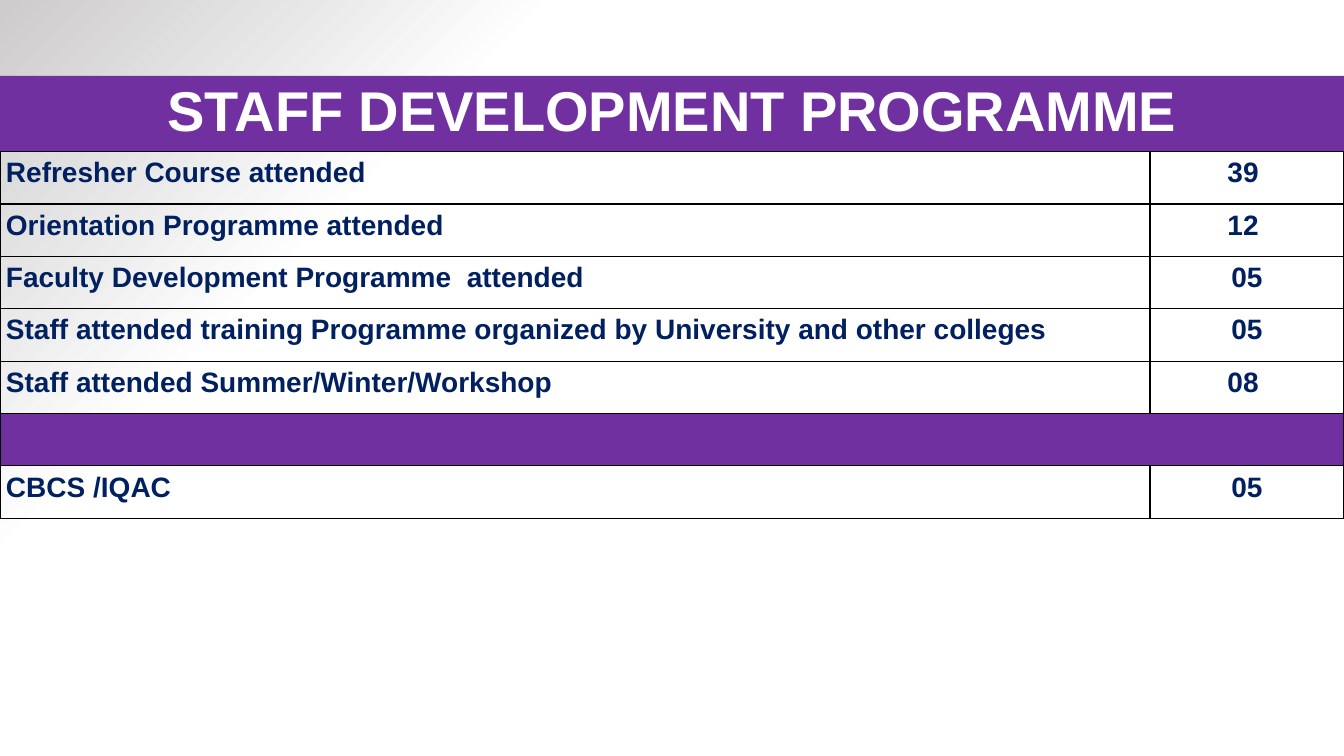
from dataclasses import dataclass

from lxml import etree
from pptx import Presentation
from pptx import util as u
from pptx.dml.color import RGBColor
from pptx.enum import shapes, text
from pptx.oxml import ns

WIDTH, HEIGHT = 33.87, 19.05
BAR_TOP = BAR_HEIGHT = 1.91
LABEL_WIDTH = 28.98
ROW_HEIGHT = 1.32
COURSES = [
    ("Refresher Course attended", "39 "),
    ("Orientation Programme attended", "12 "),
    ("Faculty Development Programme  attended", "05"),
    ("Staff attended training Programme organized by University and other colleges", "05"),
    ("Staff attended Summer/Winter/Workshop", "08 "),
    None,
    ("CBCS /IQAC", "05"),
]


@dataclass(frozen=True)
class Theme:
    font: str = "Arial"
    purple: str = "7030A0"
    navy: str = "002060"
    white: str = "FFFFFF"
    grey: str = "CDCBCB"
    border: str = "000000"
    title_size: int = 40
    body_size: int = 20


def write(tf, content, *, font, size, color, align, spacing):
    p = tf.paragraphs[0]
    p.alignment = align
    p.line_spacing = spacing
    r = p.add_run()
    r.text = content
    r.font.name = font
    r.font.size = u.Pt(size)
    r.font.bold = True
    r.font.color.rgb = RGBColor.from_string(color)


class SlideBuilder:
    def __init__(self, slide, theme):
        self.slide = slide
        self.theme = theme

    def background(self):
        fill = self.slide.background.fill
        fill.gradient()
        stops = ((0.73, self.theme.white), (1, self.theme.grey))
        for stop, (position, color) in zip(fill.gradient_stops, stops):
            stop.position = position
            stop.color.rgb = RGBColor.from_string(color)
        grad = self.slide.element.find(".//" + ns.qn("a:gradFill"))
        grad.remove(grad.find(ns.qn("a:lin")))
        circle = etree.SubElement(grad, ns.qn("a:path"), path="circle")
        etree.SubElement(circle, ns.qn("a:fillToRect"), l="100000", t="100000")

    def title_bar(self, content):
        sp = self.slide.shapes.add_shape(
            shapes.MSO_SHAPE.RECTANGLE,
            0, u.Cm(BAR_TOP), u.Cm(WIDTH), u.Cm(BAR_HEIGHT))
        sp.shadow.inherit = False
        sp.fill.solid()
        sp.fill.fore_color.rgb = RGBColor.from_string(self.theme.purple)
        sp.line.fill.background()
        tf = sp.text_frame
        tf.word_wrap = True
        tf.vertical_anchor = text.MSO_ANCHOR.MIDDLE
        write(tf, content, font=self.theme.font, size=self.theme.title_size,
              color=self.theme.white, align=text.PP_ALIGN.CENTER, spacing=0.9)

    def table(self, rows):
        table = self.slide.shapes.add_table(
            len(rows), 2, 0, u.Cm(BAR_TOP + BAR_HEIGHT),
            u.Cm(WIDTH), u.Cm(ROW_HEIGHT * len(rows))).table
        table.first_row = table.horz_banding = False
        table.columns[0].width = u.Cm(LABEL_WIDTH)
        table.columns[1].width = u.Cm(WIDTH - LABEL_WIDTH)
        aligns = (text.PP_ALIGN.LEFT, text.PP_ALIGN.CENTER)
        for i, row in enumerate(rows):
            table.rows[i].height = u.Cm(ROW_HEIGHT)
            cells = table.rows[i].cells
            for cell in cells:
                self.cell_frame(cell, divider=row is None)
            if row is None:
                cells[0].merge(cells[1])
                continue
            for cell, content, align in zip(cells, row, aligns):
                write(cell.text_frame, content, font=self.theme.font,
                      size=self.theme.body_size, color=self.theme.navy,
                      align=align, spacing=1.15)

    def cell_frame(self, cell, divider):
        cell.margin_left = cell.margin_right = u.Cm(0.15)
        cell.margin_top = u.Cm(0.03)
        cell.margin_bottom = 0
        if divider:
            cell.fill.solid()
            cell.fill.fore_color.rgb = RGBColor.from_string(self.theme.purple)
        else:
            cell.fill.background()
        props = cell._tc.get_or_add_tcPr()
        for i, side in enumerate(("lnL", "lnR", "lnT", "lnB")):
            line = etree.Element(ns.qn("a:" + side), w=str(u.Pt(1)))
            solid = etree.SubElement(line, ns.qn("a:solidFill"))
            etree.SubElement(solid, ns.qn("a:srgbClr"), val=self.theme.border)
            props.insert(i, line)


def main():
    prs = Presentation()
    prs.slide_width, prs.slide_height = u.Cm(WIDTH), u.Cm(HEIGHT)
    s = SlideBuilder(prs.slides.add_slide(prs.slide_layouts[6]), Theme())
    s.background()
    s.title_bar("STAFF DEVELOPMENT PROGRAMME")
    s.table(COURSES)
    prs.save("out.pptx")


if __name__ == "__main__":
    main()
